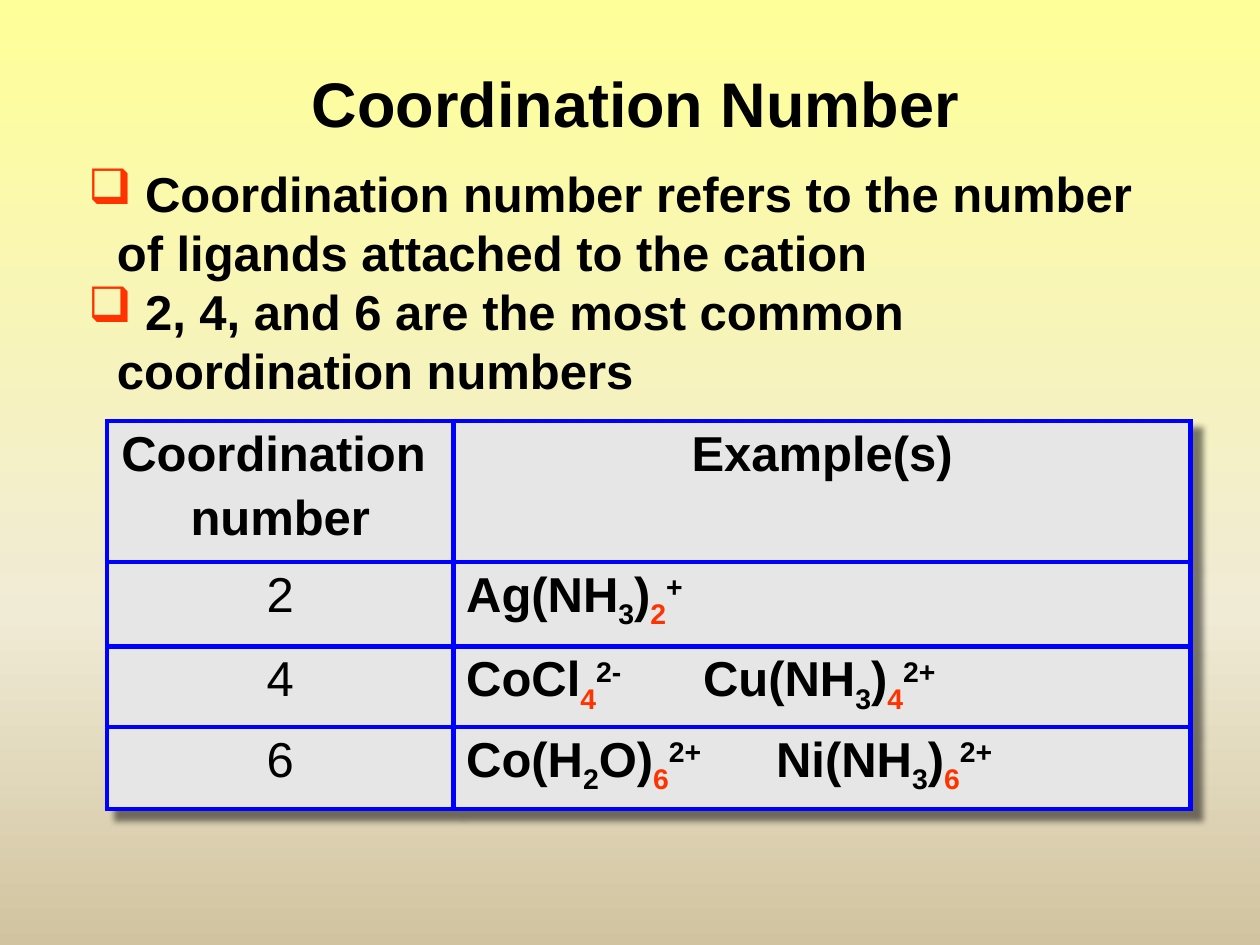
"""Build a slide on coordination numbers with a table of complex ions."""
from copy import deepcopy
from dataclasses import dataclass

from lxml.etree import SubElement
from pptx import Presentation
from pptx.dml.color import RGBColor
from pptx.enum.text import MSO_ANCHOR, MSO_AUTO_SIZE, PP_ALIGN
from pptx.oxml import parse_xml
from pptx.oxml.ns import nsdecls, qn
from pptx.slide import Slide
from pptx.table import _Cell
from pptx.text.text import _Paragraph, _Run
from pptx.util import Inches, Pt

BLACK = RGBColor(0x00, 0x00, 0x00)
RED = RGBColor(0xFF, 0x33, 0x00)
BLUE = RGBColor(0x00, 0x00, 0xFF)
GRAY = RGBColor(0xE6, 0xE6, 0xE6)
BACKGROUND = (
    (0, RGBColor(0xFF, 0xFF, 0x99)),
    (0.65, RGBColor(0xF0, 0xEB, 0xD5)),
    (1, RGBColor(0xD1, 0xC3, 0x9F)),
)
FONT = "Arial"
SUB, SUPER = -25000, 30000


@dataclass(frozen=True)
class Piece:
    text: str
    baseline: int = 0
    color: RGBColor = BLACK


@dataclass(frozen=True)
class Row:
    number: str
    examples: tuple[Piece, ...]
    height: float
    tab: float = 0


def complex_ion(ligand: tuple[Piece, ...], count: str, charge: str) -> tuple[Piece, ...]:
    return (*ligand, Piece(count, SUB, RED), Piece(charge, SUPER))


def ammine(metal: str, count: str, charge: str) -> tuple[Piece, ...]:
    return complex_ion((Piece(f"{metal}(NH"), Piece("3", SUB), Piece(")")), count, charge)


AQUA_COBALT = (Piece("Co(H"), Piece("2", SUB), Piece("O)"))
ROWS = (
    Row("2", ammine("Ag", "2", "+"), 0.67),
    Row("4", complex_ion((Piece("CoCl"),), "4", "2-") + ammine("\tCu", "4", "2+"), 0.64, 1.88),
    Row("6", complex_ion(AQUA_COBALT, "6", "2+") + ammine("\tNi", "6", "2+"), 0.65, 2.46),
)
HEADER_HEIGHT = 1.12
COLUMN_WIDTHS = (2.75, 5.85)
STATEMENTS = (
    " Coordination number refers to the number of ligands attached to the cation",
    " 2, 4, and 6 are the most common coordination numbers",
)


def format_run(run: _Run, size: int = 28, bold: bool = True, color: RGBColor = BLACK) -> None:
    run.font.name = FONT
    run.font.size = Pt(size)
    run.font.bold = bold
    run.font.color.rgb = color


def paint_background(slide: Slide) -> None:
    fill = slide.background.fill
    fill.gradient()
    fill.gradient_angle = 270
    stop_list = next(slide.element.iter(qn("a:gsLst")))
    stop_list.append(deepcopy(stop_list[-1]))
    for stop, (position, color) in zip(fill.gradient_stops, BACKGROUND):
        stop.position = position
        stop.color.rgb = color


def add_title(slide: Slide) -> None:
    title = slide.shapes.title
    title.left, title.top = Inches(0.5), Inches(0.3)
    title.width, title.height = Inches(9.09), Inches(1.03)
    title.text_frame.text = "Coordination Number"
    title.text_frame.vertical_anchor = MSO_ANCHOR.MIDDLE
    heading = title.text_frame.paragraphs[0]
    heading.alignment = PP_ALIGN.CENTER
    format_run(heading.runs[0], 36)


def add_bullet(paragraph: _Paragraph) -> None:
    properties = paragraph._p.get_or_add_pPr()
    properties.set("marL", str(Inches(0.23)))
    properties.set("indent", str(-Inches(0.23)))
    bullet_color = SubElement(properties, qn("a:buClr"))
    SubElement(bullet_color, qn("a:srgbClr"), val=str(RED))
    SubElement(properties, qn("a:buChar"), char="❑")


def add_statements(slide: Slide) -> None:
    statements = slide.shapes.add_textbox(Inches(0.6), Inches(1.25), Inches(8.71), Inches(1.97))
    frame = statements.text_frame
    frame.word_wrap = True
    frame.auto_size = MSO_AUTO_SIZE.SHAPE_TO_FIT_TEXT
    frame.text = "\n".join(STATEMENTS)
    for paragraph in frame.paragraphs:
        add_bullet(paragraph)
        format_run(paragraph.runs[0])


def space_before(paragraph: _Paragraph) -> None:
    spacing = SubElement(paragraph._p.get_or_add_pPr(), qn("a:spcBef"))
    SubElement(spacing, qn("a:spcPct"), val="20000")


def style_cell(cell: _Cell) -> None:
    cell.fill.solid()
    cell.fill.fore_color.rgb = GRAY
    for index, side in enumerate(("lnL", "lnR", "lnT", "lnB")):
        border = parse_xml(
            f'<a:{side} {nsdecls("a")} w="{Pt(3)}"><a:solidFill>'
            f'<a:srgbClr val="{BLUE}"/></a:solidFill></a:{side}>'
        )
        cell._tc.get_or_add_tcPr().insert(index, border)


def fill_centered(cell: _Cell, text: str, bold: bool) -> None:
    style_cell(cell)
    cell.text_frame.text = text
    for paragraph in cell.text_frame.paragraphs:
        paragraph.alignment = PP_ALIGN.CENTER
        space_before(paragraph)
        format_run(paragraph.runs[0], bold=bold)


def fill_examples(cell: _Cell, row: Row) -> None:
    style_cell(cell)
    paragraph = cell.text_frame.paragraphs[0]
    space_before(paragraph)
    if row.tab:
        tabs = SubElement(paragraph._p.get_or_add_pPr(), qn("a:tabLst"))
        SubElement(tabs, qn("a:tab"), pos=str(Inches(row.tab)), algn="l")
    for piece in row.examples:
        run = paragraph.add_run()
        run.text = piece.text
        format_run(run, color=piece.color)
        if piece.baseline:
            run.font._element.set("baseline", str(piece.baseline))


def add_examples_table(slide: Slide) -> None:
    heights = (HEADER_HEIGHT, *(row.height for row in ROWS))
    table = slide.shapes.add_table(
        len(heights), len(COLUMN_WIDTHS), Inches(0.85), Inches(3.34),
        Inches(sum(COLUMN_WIDTHS)), Inches(sum(heights)),
    ).table
    for column, width in zip(table.columns, COLUMN_WIDTHS):
        column.width = Inches(width)
    for table_row, height in zip(table.rows, heights):
        table_row.height = Inches(height)
    shadow = parse_xml(
        f'<a:effectLst {nsdecls("a")}><a:outerShdw blurRad="{Inches(0.05)}" '
        f'dist="{Inches(0.1)}" dir="2700000"><a:srgbClr val="{BLACK}">'
        '<a:alpha val="50000"/></a:srgbClr></a:outerShdw></a:effectLst>'
    )
    table._tbl.tblPr.insert(0, shadow)
    fill_centered(table.cell(0, 0), "Coordination \nnumber", True)
    fill_centered(table.cell(0, 1), "Example(s)", True)
    for index, row in enumerate(ROWS, start=1):
        fill_centered(table.cell(index, 0), row.number, False)
        fill_examples(table.cell(index, 1), row)


def main() -> None:
    presentation = Presentation()
    presentation.slide_width, presentation.slide_height = Inches(10), Inches(7.5)
    slide = presentation.slides.add_slide(presentation.slide_layouts[5])
    paint_background(slide)
    add_title(slide)
    add_statements(slide)
    add_examples_table(slide)
    presentation.save("out.pptx")


if __name__ == "__main__":
    main()
